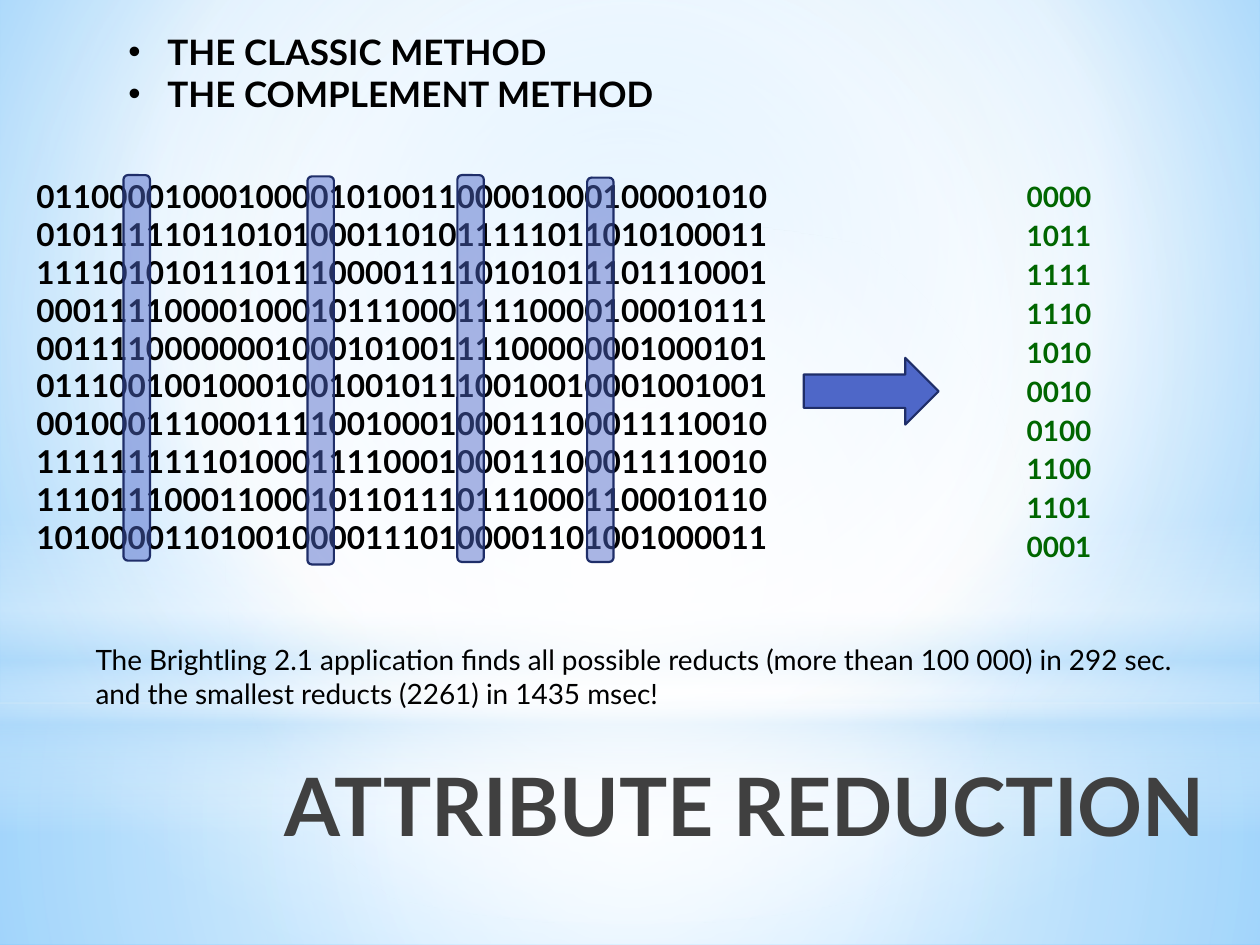
import pptx
import pptx.util
import pptx.oxml
import pptx.oxml.ns
import pptx.dml.color
import pptx.enum.shapes
import pptx.enum.text

Inches = pptx.util.Inches
RGB = pptx.dml.color.RGBColor
SHAPE = pptx.enum.shapes.MSO_SHAPE
ALIGN = pptx.enum.text.PP_ALIGN

BLACK = RGB(0x00, 0x00, 0x00)
WHITE = RGB(0xFF, 0xFF, 0xFF)
GRAY = RGB(0x40, 0x40, 0x40)
GREEN = RGB(0x00, 0x66, 0x00)
BLUE = RGB(0x4E, 0x67, 0xC8)
NAVY = RGB(0x1F, 0x2E, 0x69)
INK = RGB(0x21, 0x27, 0x45)
PALE = RGB(0xB4, 0xDC, 0xFA)
SKY = RGB(0x9E, 0xD5, 0xFF)
AZURE = RGB(0x5B, 0xB9, 0xFF)

ROUND = '<a:path path="circle"><a:fillToRect l="{}000" t="{}000" r="{}000" b="{}000"/></a:path>'
CENTER = ROUND.format(50, 50, 50, 50)
DOWN = '<a:lin ang="5400000" scaled="0"/>'

ROWS = [
    "0110000100010000101001100001000100001010",
    "0101111101101010001101011111011010100011",
    "1111010101110111000011110101011101110001",
    "0001111000010001011100011110000100010111",
    "0011110000000100010100111100000001000101",
    "0111001001000100100101110010010001001001",
    "0010001110001111001000100011100011110010",
    "1111111111010001111000100011100011110010",
    "1110111000110001011011101110001100010110",
    "1010000110100100001110100001101001000011",
]
CODES = ["0000", "1011", "1111", "1110", "1010", "0010", "0100", "1100", "1101", "0001"]
BARS = [(0.79, 0.03, 3.06), (2.25, 0.04, 3.08), (3.44, 0.03, 3.07), (4.47, 0.05, 3.05)]


def blend(node, stops, shade):
    """Turn the first solid fill in a node into a gradient."""
    parts = "".join(
        f'<a:gs pos="{pos}000"><a:srgbClr val="{color}"><a:alpha val="{alpha}000"/></a:srgbClr></a:gs>'
        for pos, color, alpha in stops)
    names = pptx.oxml.ns.nsdecls("a")
    grad = pptx.oxml.parse_xml(
        f'<a:gradFill {names} rotWithShape="1"><a:gsLst>{parts}</a:gsLst>{shade}</a:gradFill>')
    solid = next(node.iter(pptx.oxml.ns.qn("a:solidFill")))
    solid.getparent().replace(solid, grad)


def block(slide, kind, box, color=BLUE, line=NAVY):
    """Add a flat shape, outlined when a line colour is given."""
    shape = slide.shapes.add_shape(kind, *map(Inches, box))
    shape.shadow.inherit = False
    shape.fill.solid()
    shape.fill.fore_color.rgb = color
    if line is None:
        shape.line.fill.background()
    else:
        shape.line.color.rgb = line
        shape.line.width = pptx.util.Pt(1.25)
    return shape


def write(slide, box, lines, size, color=BLACK, bold=True, wrap=True, after=0):
    """Add a text box with one paragraph for each line."""
    frame = slide.shapes.add_textbox(*map(Inches, box)).text_frame
    frame.word_wrap = wrap
    frame.text = "\n".join(lines)
    for para in frame.paragraphs:
        para.space_after = pptx.util.Pt(after)
        font = para.runs[0].font
        font.name, font.size, font.bold = "Lato", pptx.util.Pt(size), bold
        font.color.rgb = color
    return frame


def backdrop(slide):
    """Paint the sky gradient and its layers of haze."""
    slide.background.fill.solid()
    slide.background.fill.fore_color.rgb = SKY
    blend(slide.element, [(0, SKY, 100), (60, WHITE, 100), (100, AZURE, 100)],
          ROUND.format(20, 10, 20, 60))
    layers = [
        (SHAPE.RECTANGLE, 5.58, 1.92, CENTER,
         [(0, WHITE, 91), (37, WHITE, 76), (100, PALE, 79)]),
        (SHAPE.RECTANGLE, 0, 5.58, CENTER,
         [(0, WHITE, 89), (48, WHITE, 62), (100, PALE, 79)]),
        (SHAPE.RECTANGLE, 4.12, 2.5, DOWN,
         [(0, WHITE, 0), (29, WHITE, 30), (45, PALE, 40), (55, WHITE, 26),
          (65, PALE, 60), (100, WHITE, 0)]),
        (SHAPE.OVAL, 1.75, 5.58, CENTER, [(0, WHITE, 100), (56, WHITE, 0)]),
    ]
    for kind, top, high, shade, stops in layers:
        layer = block(slide, kind, (0, top, 10, high), WHITE, None)
        blend(layer.element.spPr, stops, shade)


def heading(slide, box):
    """Set the large title at the right."""
    para = write(slide, box, ["ATTRIBUTE REDUCTION"], 46).paragraphs[0]
    para.alignment = ALIGN.RIGHT
    blend(para.runs[0].font._element, [(0, BLACK, 100), (40, GRAY, 100), (100, INK, 65)], DOWN)


def matrix(slide, box):
    """Write the bit rows and mark the chosen columns."""
    write(slide, box, ROWS, 18)
    left, top = box[:2]
    for right, drop, high in BARS:
        bar = block(slide, SHAPE.ROUNDED_RECTANGLE, (left + right, top + drop, 0.21, high))
        blend(bar.element.spPr, [(0, BLUE, 47), (100, BLUE, 47)], DOWN)


def methods(slide, box):
    """List the methods with bullets."""
    frame = write(slide, box, ["THE CLASSIC METHOD", "THE COMPLEMENT METHOD"], 20)
    names = pptx.oxml.ns.nsdecls("a")
    for para in frame.paragraphs:
        props = para._p.get_or_add_pPr()
        props.set("marL", str(Inches(0.31)))
        props.set("indent", str(-Inches(0.31)))
        props.append(pptx.oxml.parse_xml(f'<a:buFont {names} typeface="Arial"/>'))
        props.append(pptx.oxml.parse_xml(f'<a:buChar {names} char="•"/>'))


def main():
    """Build the slide and save it."""
    deck = pptx.Presentation()
    deck.slide_width, deck.slide_height = Inches(10), Inches(7.5)
    slide = deck.slides.add_slide(deck.slide_layouts[6])
    backdrop(slide)
    heading(slide, (1.46, 5.95, 8.2, 1.25))
    write(slide, (8.05, 1.38, 1.18, 3.17), CODES, 16, GREEN, after=3)
    matrix(slide, (0.19, 1.36, 6.19, 3.13))
    write(slide, (0.66, 5.05, 9.22, 0.64), [
        "The Brightling 2.1 application finds all possible reducts (more thean 100 000) in 292 sec.",
        "and the smallest reducts (2261) in 1435 msec!"], 16, bold=False, wrap=False)
    block(slide, SHAPE.RIGHT_ARROW, (6.38, 2.84, 1.07, 0.53))
    methods(slide, (0.92, 0.19, 5.99, 0.77))
    deck.save("out.pptx")


if __name__ == "__main__":
    main()
